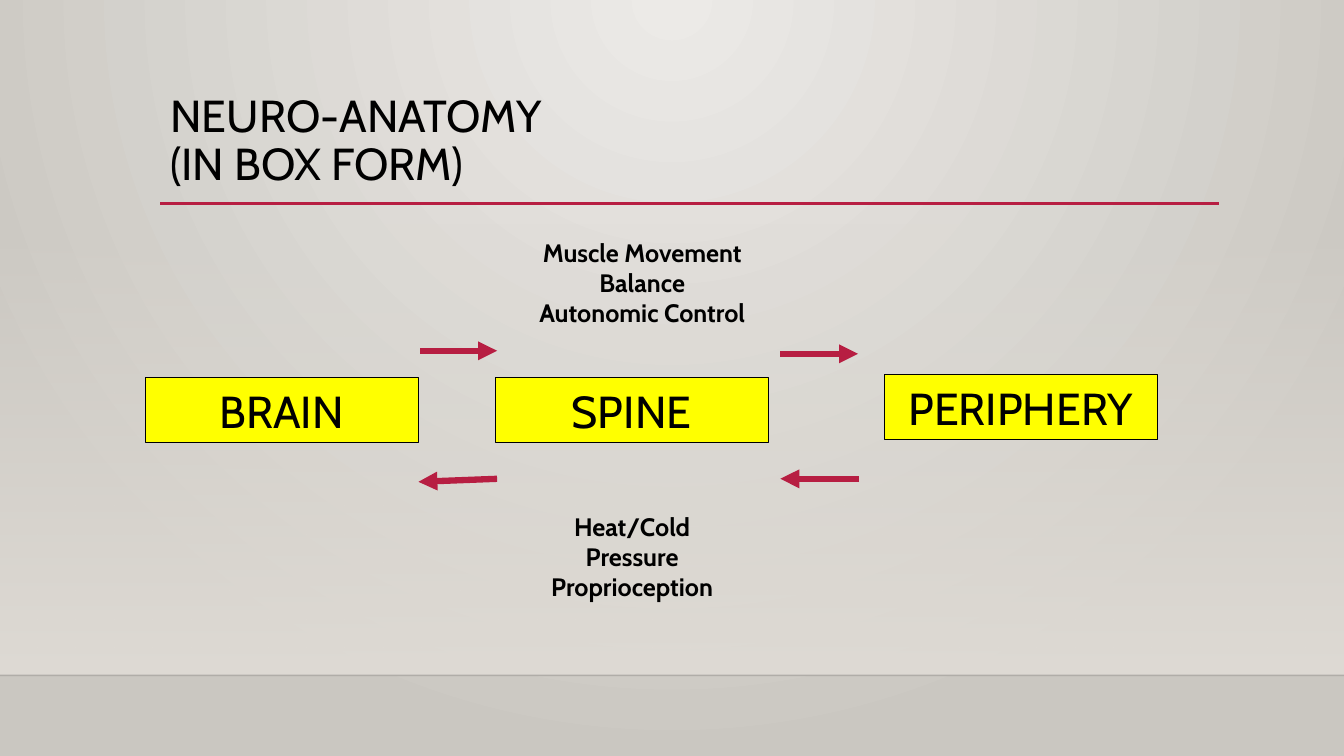
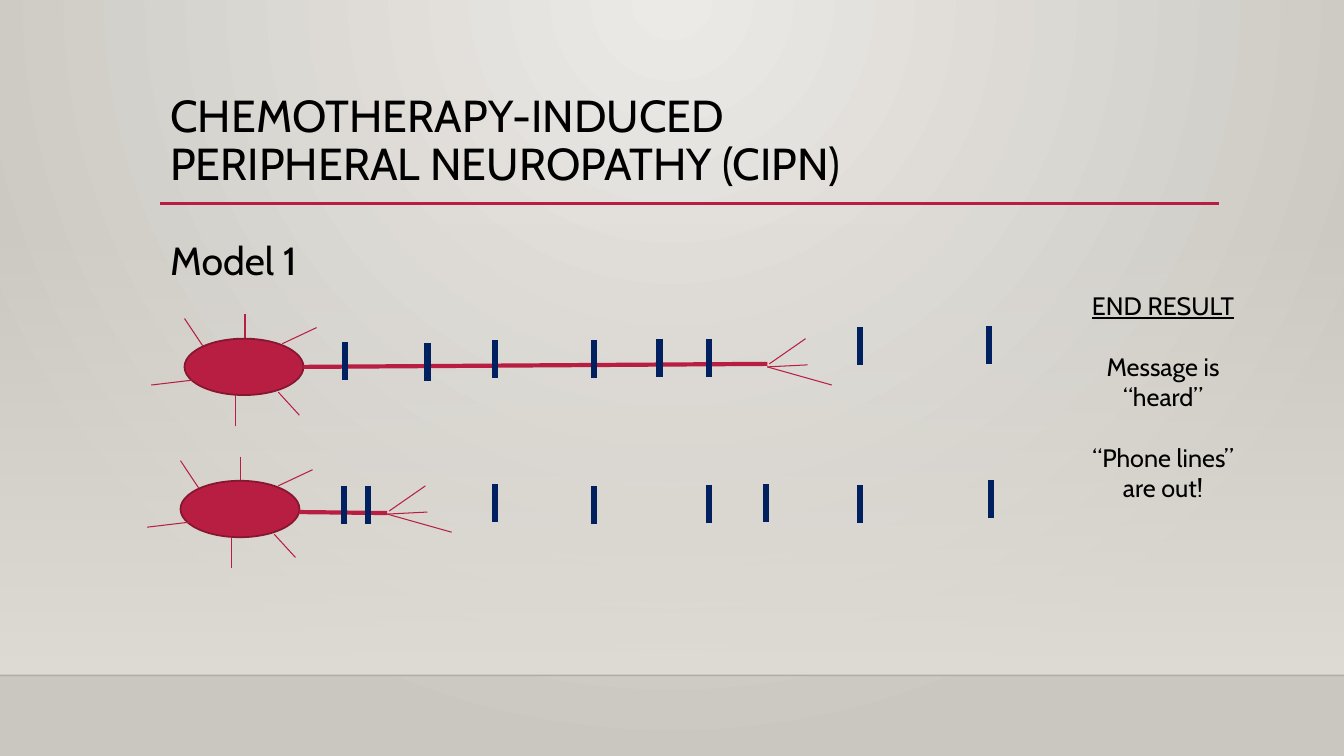
from lxml import etree
from pptx import Presentation
from pptx import util as u
from pptx.dml.color import RGBColor
from pptx.enum import shapes, text
from pptx.oxml.ns import qn

WIDTH, HEIGHT = 13.33, 7.5
FONT = "Cabin"
BLACK = RGBColor(0x00, 0x00, 0x00)
CRIMSON = RGBColor(0xB7, 0x1E, 0x42)
MAROON = RGBColor(0x87, 0x16, 0x31)
NAVY = RGBColor(0x00, 0x20, 0x60)
YELLOW = RGBColor(0xFF, 0xFF, 0x00)
STONE = RGBColor(0xDF, 0xDB, 0xD5)
PALE = RGBColor(0xEC, 0xEA, 0xE7)
TAUPE = RGBColor(0xCA, 0xC7, 0xC1)

MARGIN, CONTENT_WIDTH = 1.59, 10.5
RULE_Y, BAND_TOP, FLOOR_Y = 2.02, 2.21, 6.7


def add_line(page, start, end, color, width, arrow=False):
    line = page.shapes.add_connector(
        shapes.MSO_CONNECTOR.STRAIGHT, *[u.Inches(v) for v in (*start, *end)])
    line.line.color.rgb = color
    line.line.width = u.Pt(width)
    properties = line.element.spPr
    if arrow:
        etree.SubElement(properties.find(qn("a:ln")), qn("a:tailEnd"), type="triangle")
    etree.SubElement(properties, qn("a:effectLst"))
    return line


def add_text(page, area, lines, size, centred=True, fill=None):
    """Add a text box, or a thinly outlined rectangle when a fill is given."""
    area = [u.Inches(v) for v in area]
    if fill is None:
        box = page.shapes.add_textbox(*area)
    else:
        box = page.shapes.add_shape(shapes.MSO_SHAPE.RECTANGLE, *area)
        box.shadow.inherit = False
        box.fill.solid()
        box.fill.fore_color.rgb = fill
        box.line.color.rgb = BLACK
        box.line.width = u.Pt(0.75)
    frame = box.text_frame
    frame.word_wrap = True
    frame.text = "\n".join(lines)
    for para in frame.paragraphs:
        para.alignment = text.PP_ALIGN.CENTER if centred else text.PP_ALIGN.LEFT
        para.font.name = FONT
        para.font.size = u.Pt(size)
        para.font.color.rgb = BLACK
    return frame.paragraphs


deck = Presentation()
deck.slide_width, deck.slide_height = u.Inches(WIDTH), u.Inches(HEIGHT)

# Shared background: a glow from the top centre
master = deck.slide_master
glow = master.background.fill
glow.gradient()
for stop, color in zip(glow.gradient_stops, (PALE, TAUPE)):
    stop.color.rgb = color
linear = master.element.find(".//" + qn("p:bg")).find(".//" + qn("a:lin"))
circle = etree.Element(qn("a:path"), path="circle")
etree.SubElement(circle, qn("a:fillToRect"), l="43000", t="0", r="43000", b="100000")
linear.getparent().replace(linear, circle)

# Shared band, floor line, title and rule
pages = []
for title in ("NEURO-ANATOMY\v(IN BOX FORM)",
              "CHEMOTHERAPY-INDUCED\vPERIPHERAL NEUROPATHY (CIPN)"):
    page = deck.slides.add_slide(deck.slide_layouts[6])
    band = page.shapes.add_shape(
        shapes.MSO_SHAPE.RECTANGLE, 0, u.Inches(BAND_TOP),
        deck.slide_width, u.Inches(FLOOR_Y - BAND_TOP))
    band.shadow.inherit = False
    band.line.fill.background()
    band.fill.gradient()
    band.fill.gradient_angle = 270
    for stop in band.fill.gradient_stops:
        stop.color.rgb = STONE
    floor = add_line(page, (0, FLOOR_Y), (WIDTH, FLOOR_Y), BLACK, 1)
    for part, alpha in ((band, "0"), (floor, "20000")):
        first_color = part.element.spPr.find(".//" + qn("a:srgbClr"))
        etree.SubElement(first_color, qn("a:alpha"), val=alpha)
    add_line(page, (MARGIN, RULE_Y), (MARGIN + CONTENT_WIDTH, RULE_Y), CRIMSON, 2.5)
    heading = add_text(page, (MARGIN, 0.88, CONTENT_WIDTH, 1.15), [title], 32, centred=False)
    heading[0].line_spacing = 0.9
    pages.append(page)
anatomy, neuropathy = pages

# Slide 1: boxes, signal arrows and their captions
for name, left, top in (("BRAIN", 1.44, 3.75), ("SPINE", 4.91, 3.75), ("PERIPHERY", 8.77, 3.72)):
    add_text(anatomy, (left, top, 2.71, 0.64), [name], 32, fill=YELLOW)

for start, end in (
    ((4.17, 3.48), (4.93, 3.48)),
    ((7.74, 3.51), (8.51, 3.51)),
    ((8.52, 4.75), (7.74, 4.75)),
    ((4.93, 4.75), (4.15, 4.78)),
):
    add_line(anatomy, start, end, CRIMSON, 4.5, arrow=True)

for left, top, signals in (
    (4.54, 2.3, ("Muscle Movement", "Balance", "Autonomic Control")),
    (4.44, 5.02, ("Heat/Cold", "Pressure", "Proprioception")),
):
    for para in add_text(anatomy, (left, top, 3.66, 1.01), signals, 18):
        para.font.bold = True

# Slide 2: a whole neuron above a shortened one
model = add_text(neuropathy, (MARGIN, 2.2, CONTENT_WIDTH, 0.7), ["Model 1"], 28, centred=False)
model[0].line_spacing = 1.2

SOMA_WIDTH, SOMA_HEIGHT = 1.18, 0.56
# Offsets from the soma's top left corner, and from the fork of the axon
DENDRITES = (
    (0.97, 0.05, 1.31, -0.11),
    (-0.33, 0.46, 0.09, 0.41),
    (0.51, 0.87, 0.51, 0.56),
    (0.93, 0.53, 1.14, 0.76),
    (0, -0.2, 0.18, 0.07),
    (0.6, -0.24, 0.6, -0.01),
)
BRANCHES = ((0.02, -0.03, 0.38, -0.28), (0, 0, 0.4, -0.02), (0, 0, 0.64, 0.18))

for soma_left, soma_top, axon_y, tip, fork_y in (
    (1.83, 3.36, 3.64, (7.61, 3.61), 3.64),
    (1.79, 4.77, 5.08, (3.84, 5.09), 5.1),
):
    soma = neuropathy.shapes.add_shape(
        shapes.MSO_SHAPE.OVAL,
        *[u.Inches(v) for v in (soma_left, soma_top, SOMA_WIDTH, SOMA_HEIGHT)])
    soma.shadow.inherit = False
    soma.fill.solid()
    soma.fill.fore_color.rgb = CRIMSON
    soma.line.color.rgb = MAROON
    soma.line.width = u.Pt(1.25)
    add_line(neuropathy, (soma_left + SOMA_WIDTH, axon_y), tip, CRIMSON, 3)
    for x, y, offsets in ((soma_left, soma_top, DENDRITES), (tip[0], fork_y, BRANCHES)):
        for x1, y1, x2, y2 in offsets:
            add_line(neuropathy, (x + x1, y + y1), (x + x2, y + y2), CRIMSON, 0.75)

TICK_HEIGHT = 0.38
for x, top in (
    (3.42, 3.39), (4.24, 3.4), (4.91, 3.37), (5.89, 3.37),
    (6.54, 3.36), (7.03, 3.36), (8.53, 3.24), (9.81, 3.23),
    (3.41, 4.82), (3.65, 4.82), (4.91, 4.8), (5.89, 4.82),
    (7.03, 4.81), (7.6, 4.8), (8.53, 4.81), (9.83, 4.76),
):
    add_line(neuropathy, (x, top + TICK_HEIGHT), (x, top), NAVY, 4.5)

result = add_text(
    neuropathy, (10.57, 2.83, 1.93, 2.22),
    ("END RESULT", "Message is “heard”", "“Phone lines” are out!"), 18)
result[0].font.underline = True
for para in result[1:]:
    para.space_before = u.Pt(22)

deck.save("out.pptx")
